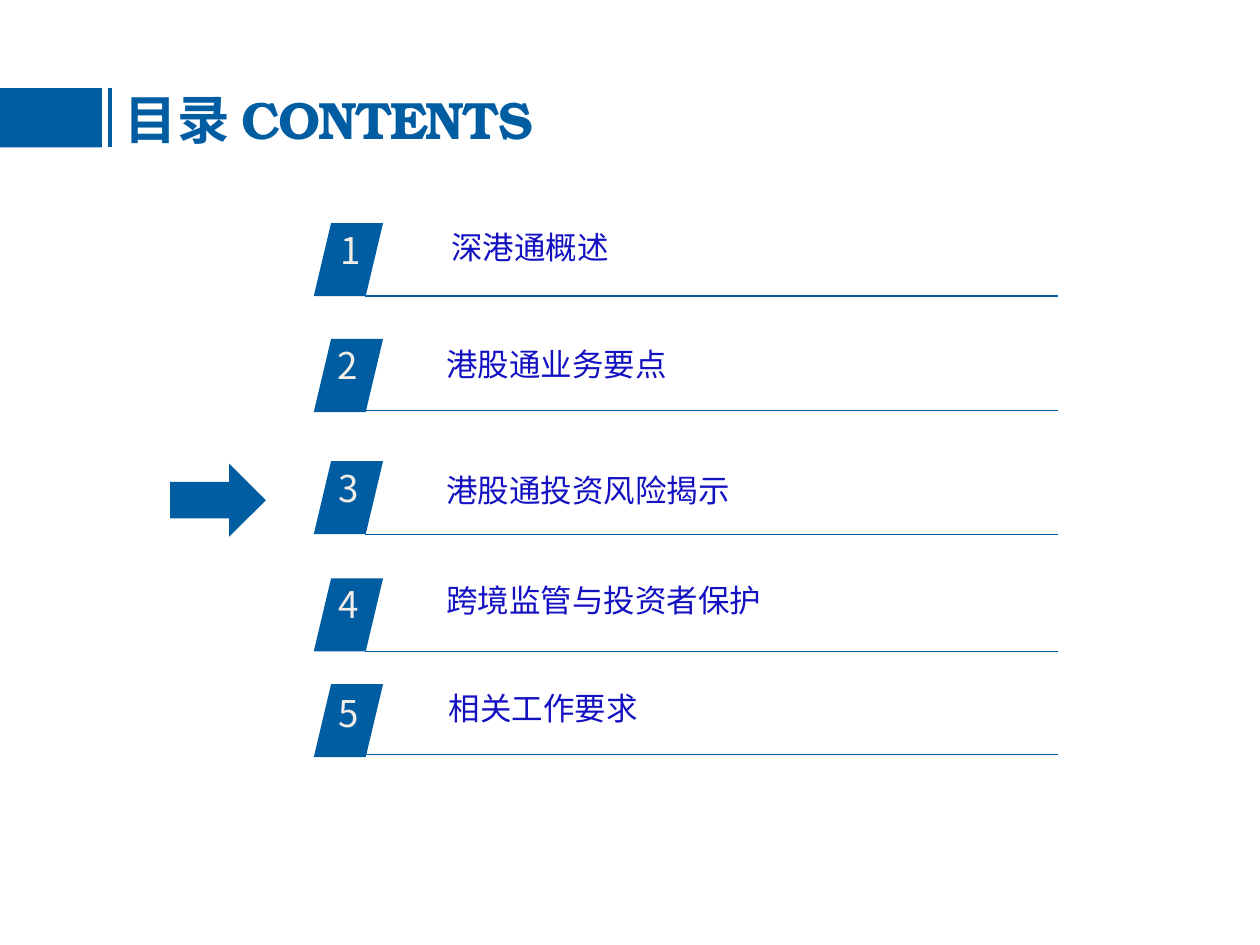
from lxml import etree
from pptx import Presentation
from pptx import util as u
from pptx.dml.color import RGBColor
from pptx.enum import shapes, text
from pptx.oxml import ns

BLUE, CREAM, INK = "005DA2", "F4EDE7", "1311C1"
SANS, SERIF = "Noto Sans CJK SC", "TeX Gyre Bonum"


def color(code):
    return RGBColor.from_string(code)


class Deck:
    def __init__(self):
        self.prs = Presentation()
        self.prs.slide_width = u.Inches(10)
        self.prs.slide_height = u.Inches(7.5)
        self.slide = self.prs.slides.add_slide(self.prs.slide_layouts[6])

    def shape(self, kind, *box, turn=0):
        item = self.slide.shapes.add_shape(kind, *map(u.Inches, box))
        item.shadow.inherit = False
        item.fill.solid()
        item.fill.fore_color.rgb = color(BLUE)
        item.line.fill.background()
        item.rotation = turn

    def line(self, x1, y1, x2, y2, width=0.75):
        ends = map(u.Inches, (x1, y1, x2, y2))
        item = self.slide.shapes.add_connector(
            shapes.MSO_CONNECTOR.STRAIGHT, *ends)
        item.line.color.rgb = color(BLUE)
        item.line.width = u.Pt(width)
        etree.SubElement(item._element.spPr, ns.qn("a:effectLst"))

    def label(self, *box, wrap=True, inset=(0.07, 0.04), center=False,
              middle=False, space=None):
        item = self.slide.shapes.add_textbox(*map(u.Inches, box))
        frame = item.text_frame
        frame.word_wrap = wrap
        frame.auto_size = text.MSO_AUTO_SIZE.SHAPE_TO_FIT_TEXT
        frame.margin_left = frame.margin_right = u.Inches(inset[0])
        frame.margin_top = frame.margin_bottom = u.Inches(inset[1])
        if middle:
            frame.vertical_anchor = text.MSO_ANCHOR.MIDDLE
        para = frame.paragraphs[0]
        if center:
            para.alignment = text.PP_ALIGN.CENTER
        if space:
            para.line_spacing = space
        return para

    def run(self, para, words, size, code, face=SANS, bold=False, track=0):
        run = para.add_run()
        run.text = words
        font = run.font
        font.size = u.Pt(size)
        font.bold = bold
        font.color.rgb = color(code)
        font.name = face
        props = run._r.get_or_add_rPr()
        # East Asian glyphs take their face from a separate element
        east = etree.SubElement(props, ns.qn("a:ea"))
        east.set("typeface", face)
        if track:
            props.set("spc", str(round(track * 100)))


def main():
    deck = Deck()
    kinds = shapes.MSO_SHAPE

    # Heading
    deck.shape(kinds.RECTANGLE, 0, 0.7, 0.81, 0.47)
    deck.line(0.87, 0.7, 0.87, 1.17, 2.25)
    head = deck.label(0.92, 0.65, 3.61, 0.58, middle=True)
    deck.run(head, "目录 ", 30, BLUE, bold=True)
    deck.run(head, "CONTENTS", 30, BLUE, SERIF, True, -1.1)

    # Topics: tag top, rule y, number x and y, then name, x, y, w, h, spacing
    rows = [
        (1.77, 2.35, 2.51, 1.76, "深港通概述", 3.51, 1.77, 1.41, 0.38, None),
        (2.69, 3.26, 2.49, 2.67, "港股通业务要点", 3.47, 2.7, 1.92, 0.38, None),
        (3.66, 4.24, 2.5, 3.65, "港股通投资风险揭示", 3.47, 3.55, 2.42, 0.53, 1.5),
        (4.59, 5.17, 2.5, 4.57, "跨境监管与投资者保护", 3.47, 4.57, 2.68, 0.38, None),
        (5.43, 5.99, 2.5, 5.43, "相关工作要求", 3.49, 5.43, 1.67, 0.38, None),
    ]
    for num, (top, rule, nx, ny, name, x, y, w, h, space) in enumerate(rows, 1):
        deck.line(2.9, rule, 8.4, rule)
        deck.shape(kinds.PARALLELOGRAM, 2.49, top, 0.55, 0.58)
        para = deck.label(nx, ny, 0.54, 0.45, inset=(0.1, 0.05), center=True)
        deck.run(para, str(num), 21, CREAM)
        para = deck.label(x, y, w, h, wrap=False, space=space)
        deck.run(para, name, 18, INK)

    # Arrow to the current topic
    deck.shape(kinds.DOWN_ARROW, 1.44, 3.59, 0.58, 0.76, turn=270)

    deck.prs.save("out.pptx")


if __name__ == "__main__":
    main()
